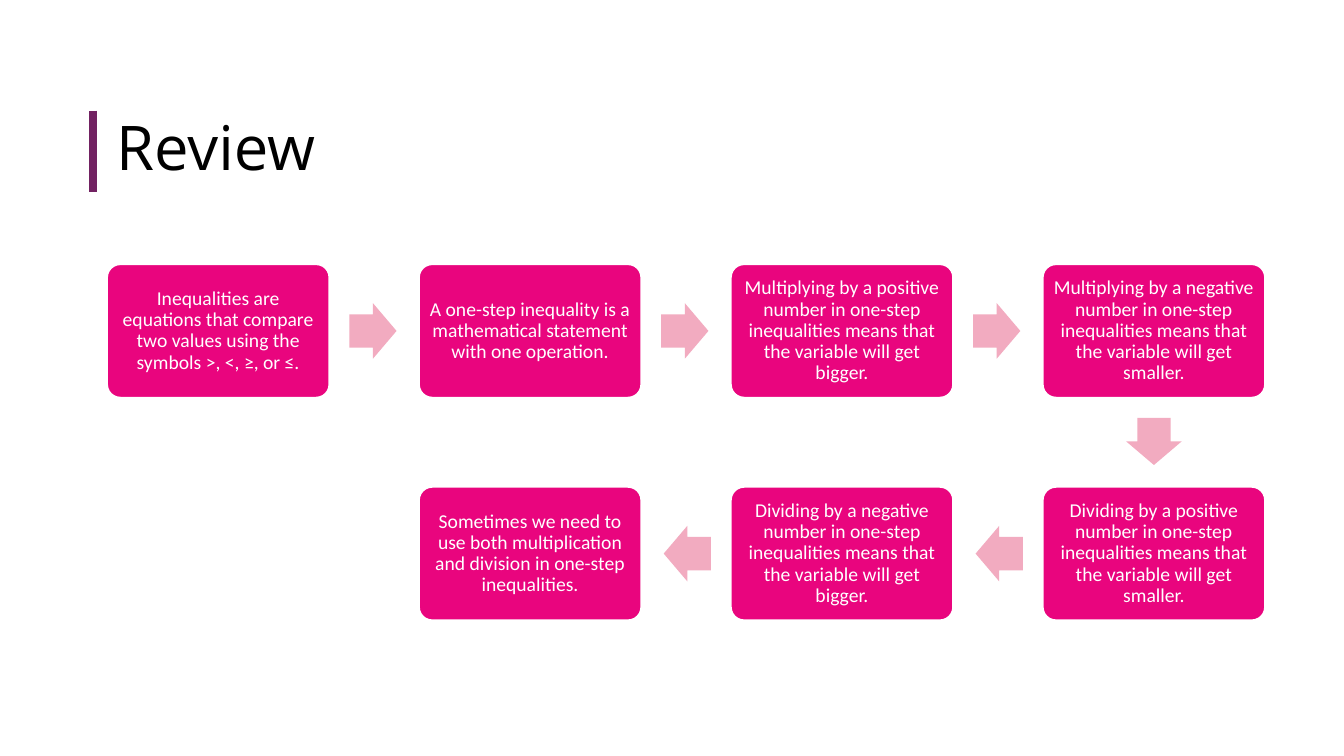
from dataclasses import dataclass

from lxml import etree
from pptx import Presentation
from pptx.dml.color import RGBColor
from pptx.enum.shapes import MSO_CONNECTOR, MSO_SHAPE
from pptx.enum.text import MSO_ANCHOR, MSO_AUTO_SIZE, PP_ALIGN
from pptx.oxml.ns import qn
from pptx.util import Cm, Pt

ROUND = MSO_SHAPE.ROUNDED_RECTANGLE
ARROW = MSO_SHAPE.RIGHT_ARROW
STRAIGHT = MSO_CONNECTOR.STRAIGHT
MIDDLE = MSO_ANCHOR.MIDDLE
FIXED = MSO_AUTO_SIZE.NONE
LEFT, CENTER = PP_ALIGN.LEFT, PP_ALIGN.CENTER

TITLE = "Review"
STEPS = [
    (0, 0, "Inequalities are equations that compare two values using the symbols >, <, ≥, or ≤."),
    (1, 0, "A one-step inequality is a mathematical statement with one operation."),
    (2, 0, "Multiplying by a positive number in one-step inequalities means that the variable will get bigger."),
    (3, 0, "Multiplying by a negative number in one-step inequalities means that the variable will get smaller."),
    (3, 1, "Dividing by a positive number in one-step inequalities means that the variable will get smaller."),
    (2, 1, "Dividing by a negative number in one-step inequalities means that the variable will get bigger."),
    (1, 1, "Sometimes we need to use both multiplication and division in one-step inequalities."),
]
TURNS = {(1, 0): 0, (0, 1): 90, (-1, 0): 180}


@dataclass
class Theme:
    bar: str = "722262"
    box: str = "E9057E"
    arrow: str = "F2ABC0"
    light: str = "FFFFFF"
    dark: str = "000000"
    head: str = "Open Sans"
    body: str = "Calibri"
    big: int = 44
    small: int = 14


THEME = Theme()
BOX_W, BOX_H = 5.61, 3.37
ARROW_W, ARROW_H = 1.19, 1.4
FIRST_X, FIRST_Y = 5.5, 8.34
STEP_X, STEP_Y = 7.86, 5.61
REACH = 0.496


def color(code):
    return RGBColor.from_string(code)


def write(frame, text, font, size, ink, align):
    frame.word_wrap = True
    frame.auto_size = FIXED
    frame.vertical_anchor = MIDDLE
    para = frame.paragraphs[0]
    para.alignment = align
    para.line_spacing = 0.9
    run = para.add_run()
    run.text = text
    run.font.name = font
    run.font.size = Pt(size)
    run.font.color.rgb = color(ink)


def add_block(slide, kind, mid_x, mid_y, width, height, fill):
    block = slide.shapes.add_shape(
        kind, Cm(mid_x - width / 2), Cm(mid_y - height / 2), Cm(width), Cm(height))
    block.shadow.inherit = False
    block.fill.solid()
    block.fill.fore_color.rgb = color(fill)
    block.line.fill.background()
    return block


def add_head(slide):
    bar = slide.shapes.add_connector(STRAIGHT, Cm(2.34), Cm(2.79), Cm(2.34), Cm(4.83))
    bar.line.color.rgb = color(THEME.bar)
    bar.line.width = Pt(6)
    etree.SubElement(bar._element.spPr, qn("a:effectLst"))
    title = slide.shapes.title
    title.left, title.top, title.width, title.height = Cm(2.67), Cm(2.79), Cm(29.21), Cm(2.03)
    write(title.text_frame, TITLE, THEME.head, THEME.big, THEME.dark, LEFT)


def add_step(slide, mid_x, mid_y, text):
    box = add_block(slide, ROUND, mid_x, mid_y, BOX_W, BOX_H, THEME.box)
    box.adjustments[0] = 0.1
    box.line.color.rgb = color(THEME.light)
    box.line.width = Pt(1.5)
    frame = box.text_frame
    frame.margin_left = frame.margin_right = Cm(0.14)
    frame.margin_top = frame.margin_bottom = Cm(0.14)
    write(frame, text, THEME.body, THEME.small, THEME.light, CENTER)


def add_arrow(slide, mid_x, mid_y, turn):
    arrow = add_block(slide, ARROW, mid_x, mid_y, ARROW_W, ARROW_H, THEME.arrow)
    arrow.adjustments[0] = 0.6
    arrow.adjustments[1] = 0.5
    arrow.rotation = turn


def main():
    deck = Presentation()
    deck.slide_width, deck.slide_height = Cm(33.87), Cm(19.05)
    slide = deck.slides.add_slide(deck.slide_layouts[5])
    add_head(slide)
    for i, (col, row, text) in enumerate(STEPS):
        mid_x, mid_y = FIRST_X + col * STEP_X, FIRST_Y + row * STEP_Y
        add_step(slide, mid_x, mid_y, text)
        if i + 1 < len(STEPS):
            next_col, next_row, _ = STEPS[i + 1]
            move_x, move_y = next_col - col, next_row - row
            add_arrow(slide, mid_x + move_x * STEP_X * REACH,
                      mid_y + move_y * STEP_Y * REACH, TURNS[move_x, move_y])
    deck.save("out.pptx")


if __name__ == "__main__":
    main()
